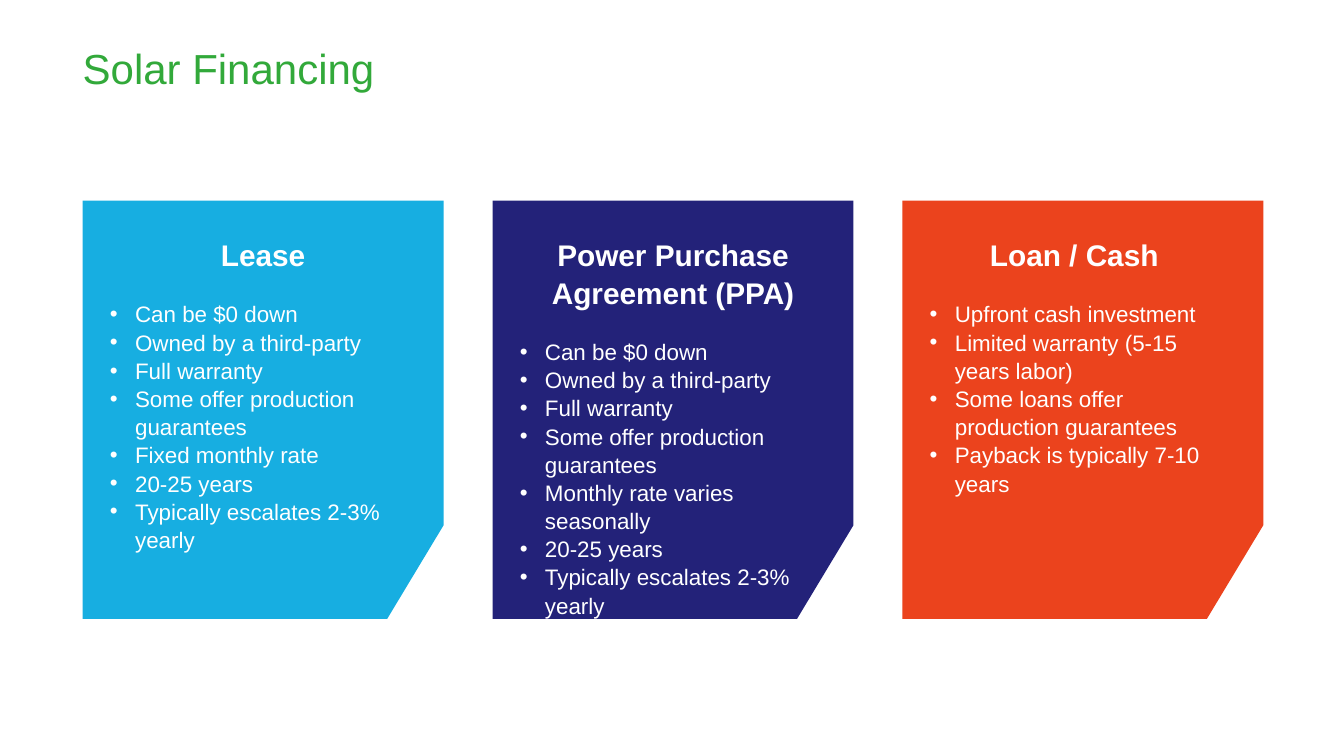
from lxml import etree
from pptx import Presentation
from pptx import util as u
from pptx.dml import color
from pptx.enum import text
from pptx.oxml import ns

HUES = {"title": "32A93A", "lease": "17AEE1", "ppa": "232279",
        "loan": "EB431D", "text": "FFFFFF"}
LEFT, TOP, WIDE, TALL, STEP = 0.82, 1.99, 3.58, 4.15, 4.065
CUT_W, CUT_H = 0.56, 0.93

SHARED = ["Can be $0 down", "Owned by a third-party", "Full warranty",
          "Some offer production guarantees"]
TERMS = ["20-25 years", "Typically escalates 2-3% yearly"]
# hue, heading, heading's right margin, bullets
CARDS = [
    ("lease", "Lease", 0, SHARED + ["Fixed monthly rate"] + TERMS),
    ("ppa", "Power Purchase Agreement (PPA)", 0,
     SHARED + ["Monthly rate varies seasonally"] + TERMS),
    ("loan", "Loan / Cash", 0.17,
     ["Upfront cash investment", "Limited warranty (5-15 years labor)",
      "Some loans offer production guarantees",
      "Payback is typically 7-10 years"]),
]


class Deck:
    """Holds the style and the current slide."""

    def __init__(self, font="Arial"):
        self.font = font
        self.prs = Presentation()
        self.prs.slide_width = u.Inches(13.33)
        self.prs.slide_height = u.Inches(7.5)
        self.slide = self.prs.slides.add_slide(self.prs.slide_layouts[5])

    def label(self, para, words, size=16, hue="text", bold=False, align="LEFT",
              before=0, line=1.05, bullet=False, right=0):
        props = para._p.get_or_add_pPr()
        if right:
            props.set("marR", str(u.Inches(right)))
        if bullet:
            props.set("marL", str(u.Inches(0.25)))
            props.set("indent", str(u.Inches(-0.25)))
            etree.SubElement(props, ns.qn("a:buFont")).set("typeface", self.font)
            etree.SubElement(props, ns.qn("a:buChar")).set("char", "•")
        para.alignment = getattr(text.PP_ALIGN, align)
        para.line_spacing = line
        para.space_before = u.Pt(before)
        run = para.add_run()
        run.text = words
        run.font.name, run.font.size, run.font.bold = self.font, u.Pt(size), bold
        run.font.color.rgb = color.RGBColor.from_string(HUES[hue])

    def frame(self, shape, side=0, top=0, low=0):
        """Set the insets of a shape's text and return its frame."""
        body = shape.text_frame
        body.word_wrap = True
        body.auto_size = text.MSO_AUTO_SIZE.NONE
        body.vertical_anchor = text.MSO_ANCHOR.TOP
        body.margin_left = body.margin_right = u.Inches(side)
        body.margin_top, body.margin_bottom = u.Inches(top), u.Inches(low)
        return body

    def title(self, words):
        shape = self.slide.shapes.title
        shape.left, shape.top = u.Inches(LEFT), u.Inches(0.37)
        shape.width, shape.height = u.Inches(8.47), u.Inches(0.94)
        self.label(self.frame(shape).paragraphs[0], words, size=30,
                   hue="title", line=1.1)

    def card(self, left, hue, head, right, items):
        """Draw a panel with its lower right corner cut off."""
        edge, base = left + WIDE, TOP + TALL
        spots = [(edge, base - CUT_H), (edge - CUT_W, base), (left, base),
                 (left, TOP), (edge, TOP)]
        spots = [(u.Inches(x), u.Inches(y)) for x, y in spots]
        outline = self.slide.shapes.build_freeform(*spots[0])
        outline.add_line_segments(spots[1:], close=True)
        shape = outline.convert_to_shape()
        shape.shadow.inherit = False
        shape.fill.solid()
        shape.fill.fore_color.rgb = color.RGBColor.from_string(HUES[hue])
        shape.line.fill.background()
        body = self.frame(shape, side=0.27, top=0.34, low=0.07)
        self.label(body.paragraphs[0], head, size=21.3, bold=True,
                   align="CENTER", right=right)
        for i, item in enumerate(items):
            self.label(body.add_paragraph(), item, bullet=True,
                       before=0 if i else 19.2)


def main():
    deck = Deck()
    deck.title("Solar Financing")
    for i, card in reversed(list(enumerate(CARDS))):
        deck.card(LEFT + i * STEP, *card)
    deck.prs.save("out.pptx")


if __name__ == "__main__":
    main()
